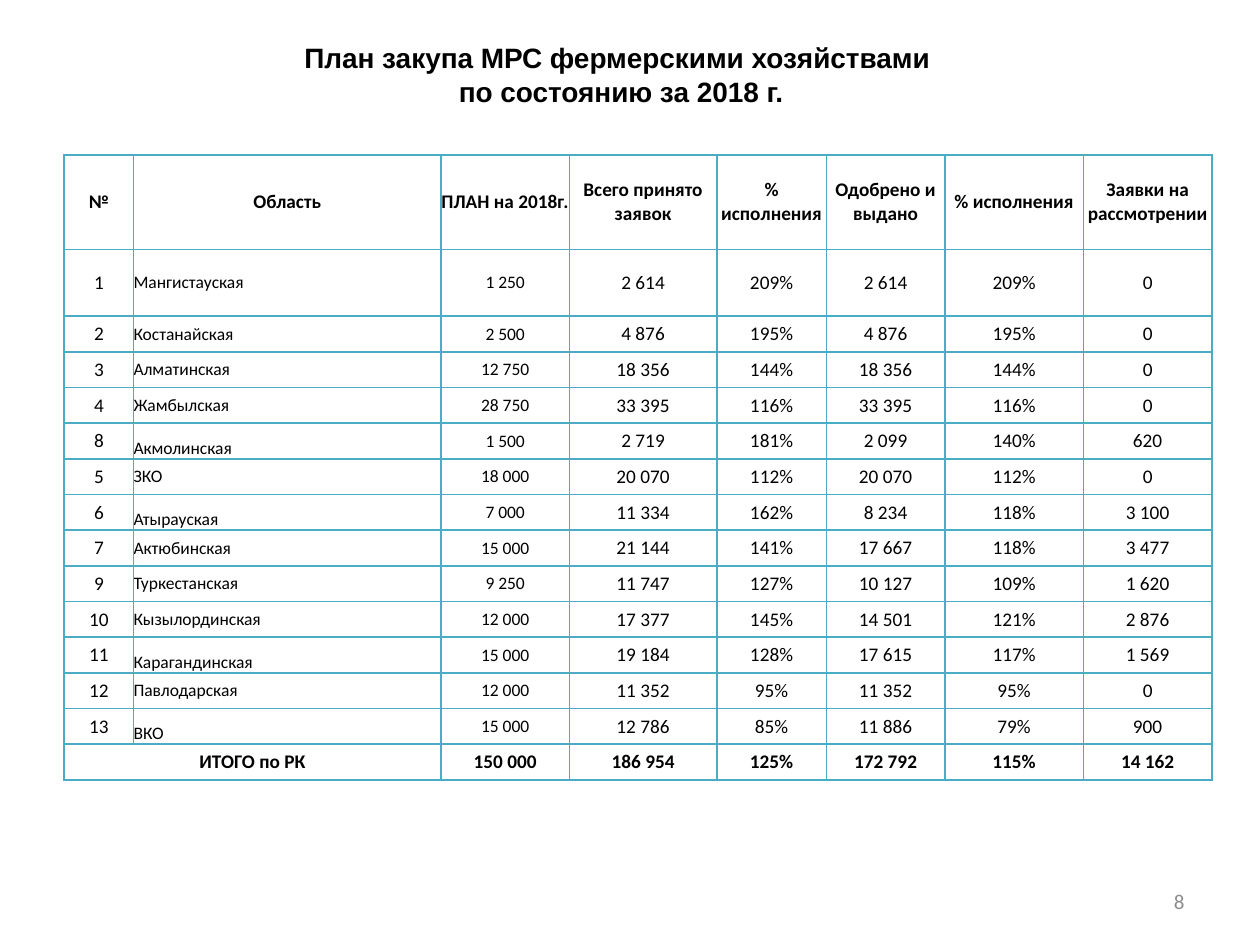
from lxml import etree
from pptx import Presentation
from pptx.dml.color import RGBColor
from pptx.enum.text import MSO_ANCHOR, PP_ALIGN
from pptx.oxml.ns import qn
from pptx.util import Inches, Pt

LEFT, CENTER, RIGHT = PP_ALIGN.LEFT, PP_ALIGN.CENTER, PP_ALIGN.RIGHT
MIDDLE, BOTTOM = MSO_ANCHOR.MIDDLE, MSO_ANCHOR.BOTTOM

TITLE_LINES = ("План закупа МРС фермерскими хозяйствами ", "по состоянию за 2018 г.")
PAGE_NUMBER = "8"
HEADERS = ("№", "Область", "ПЛАН на 2018г.", "Всего принято заявок", "% исполнения",
           "Одобрено и выдано", "% исполнения", "Заявки на рассмотрении")
REGIONS = [
    ("1", "Мангистауская", "1 250", "2 614", "209%", "2 614", "209%", "0"),
    ("2", "Костанайская", "2 500", "4 876", "195%", "4 876", "195%", "0"),
    ("3", "Алматинская", "12 750", "18 356", "144%", "18 356", "144%", "0"),
    ("4", "Жамбылская", "28 750", "33 395", "116%", "33 395", "116%", "0"),
    ("8", "Акмолинская", "1 500", "2 719", "181%", "2 099", "140%", "620"),
    ("5", "ЗКО", "18 000", "20 070", "112%", "20 070", "112%", "0"),
    ("6", "Атырауская", "7 000", "11 334", "162%", "8 234", "118%", "3 100"),
    ("7", "Актюбинская", "15 000", "21 144", "141%", "17 667", "118%", "3 477"),
    ("9", "Туркестанская", "9 250", "11 747", "127%", "10 127", "109%", "1 620"),
    ("10", "Кызылординская", "12 000", "17 377", "145%", "14 501", "121%", "2 876"),
    ("11", "Карагандинская", "15 000", "19 184", "128%", "17 615", "117%", "1 569"),
    ("12", "Павлодарская", "12 000", "11 352", "95%", "11 352", "95%", "0"),
    ("13", "ВКО", "15 000", "12 786", "85%", "11 886", "79%", "900"),
]
TOTAL = ("ИТОГО по РК", "", "150 000", "186 954", "125%", "172 792", "115%", "14 162")
BOTTOM_REGIONS = {"Акмолинская", "Атырауская", "Карагандинская", "ВКО"}
REGION_COLUMN, PLAN_COLUMN = 1, 2

THEME = {
    "title_font": "Arial", "body_font": "Calibri",
    "title_size": 16, "number_size": 12, "cell_size": 11, "small_size": 10,
    "text": "000000", "muted": "8C8C8C", "border": "4BACC6", "border_width": 1,
}

TITLE_BOX = (0.43, 0.29, 9, 0.6)
NUMBER_BOX = (7.17, 6.95, 2.33, 0.4)
TABLE_BOX = (0.51, 1.23, 9.13, 4.96)
COLUMN_WIDTHS = (0.55, 2.44, 1.02, 1.17, 0.87, 0.94, 1.1, 1.02)
HEADER_HEIGHT, FIRST_REGION_HEIGHT = 0.75, 0.53


def inches(box):
    return [Inches(length) for length in box]


def add_run(paragraph, wording, font, size, color, bold=False):
    run = paragraph.add_run()
    run.text = wording
    run.font.name = font
    run.font.size = Pt(size)
    run.font.bold = bold
    run.font.color.rgb = RGBColor.from_string(color)


def set_borders(cell):
    properties = cell._tc.get_or_add_tcPr()
    for side in ("a:lnL", "a:lnR", "a:lnT", "a:lnB"):
        line = etree.SubElement(properties, qn(side), w=str(Pt(THEME["border_width"])))
        fill = etree.SubElement(line, qn("a:solidFill"))
        etree.SubElement(fill, qn("a:srgbClr"), val=THEME["border"])


def fill_cell(cell, wording, size, bold, align=CENTER, anchor=MIDDLE):
    set_borders(cell)
    cell.fill.background()
    cell.margin_left = cell.margin_right = cell.margin_top = cell.margin_bottom = 0
    cell.vertical_anchor = anchor
    if wording:
        paragraph = cell.text_frame.paragraphs[0]
        paragraph.alignment = align
        add_run(paragraph, wording, THEME["body_font"], size, THEME["text"], bold)


def add_title(slide):
    title = slide.shapes.title
    title.left, title.top, title.width, title.height = inches(TITLE_BOX)
    title.text_frame.vertical_anchor = MIDDLE
    paragraph = title.text_frame.paragraphs[0]
    paragraph.alignment = CENTER
    for index, line in enumerate(TITLE_LINES):
        if index:
            paragraph.add_line_break()
        add_run(paragraph, line, THEME["title_font"], THEME["title_size"], THEME["text"], True)


def add_page_number(slide):
    frame = slide.shapes.add_textbox(*inches(NUMBER_BOX)).text_frame
    frame.word_wrap = True
    frame.vertical_anchor = MIDDLE
    paragraph = frame.paragraphs[0]
    paragraph.alignment = RIGHT
    add_run(paragraph, PAGE_NUMBER, THEME["body_font"], THEME["number_size"], THEME["muted"])


def add_plan_table(slide):
    rows = [HEADERS, *REGIONS, TOTAL]
    last = len(rows) - 1
    table = slide.shapes.add_table(len(rows), len(HEADERS), *inches(TABLE_BOX)).table
    table.first_row = table.horz_banding = False

    for column, width in zip(table.columns, COLUMN_WIDTHS):
        column.width = Inches(width)
    row_height = (TABLE_BOX[3] - HEADER_HEIGHT - FIRST_REGION_HEIGHT) / (len(rows) - 2)
    heights = [HEADER_HEIGHT, FIRST_REGION_HEIGHT] + [row_height] * (len(rows) - 2)
    for row, height in zip(table.rows, heights):
        row.height = Inches(height)

    for r, values in enumerate(rows):
        is_region = 0 < r < last
        for c, wording in enumerate(values):
            small = is_region and c in (REGION_COLUMN, PLAN_COLUMN)
            fill_cell(
                table.cell(r, c), wording,
                size=THEME["small_size" if small else "cell_size"],
                bold=not is_region,
                align=LEFT if is_region and c == REGION_COLUMN else CENTER,
                anchor=BOTTOM if wording in BOTTOM_REGIONS else MIDDLE,
            )
    table.cell(last, 0).merge(table.cell(last, REGION_COLUMN))


def main():
    presentation = Presentation()
    presentation.slide_width, presentation.slide_height = Inches(10), Inches(7.5)
    slide = presentation.slides.add_slide(presentation.slide_layouts[5])
    add_page_number(slide)
    add_title(slide)
    add_plan_table(slide)
    presentation.save("out.pptx")


if __name__ == "__main__":
    main()
